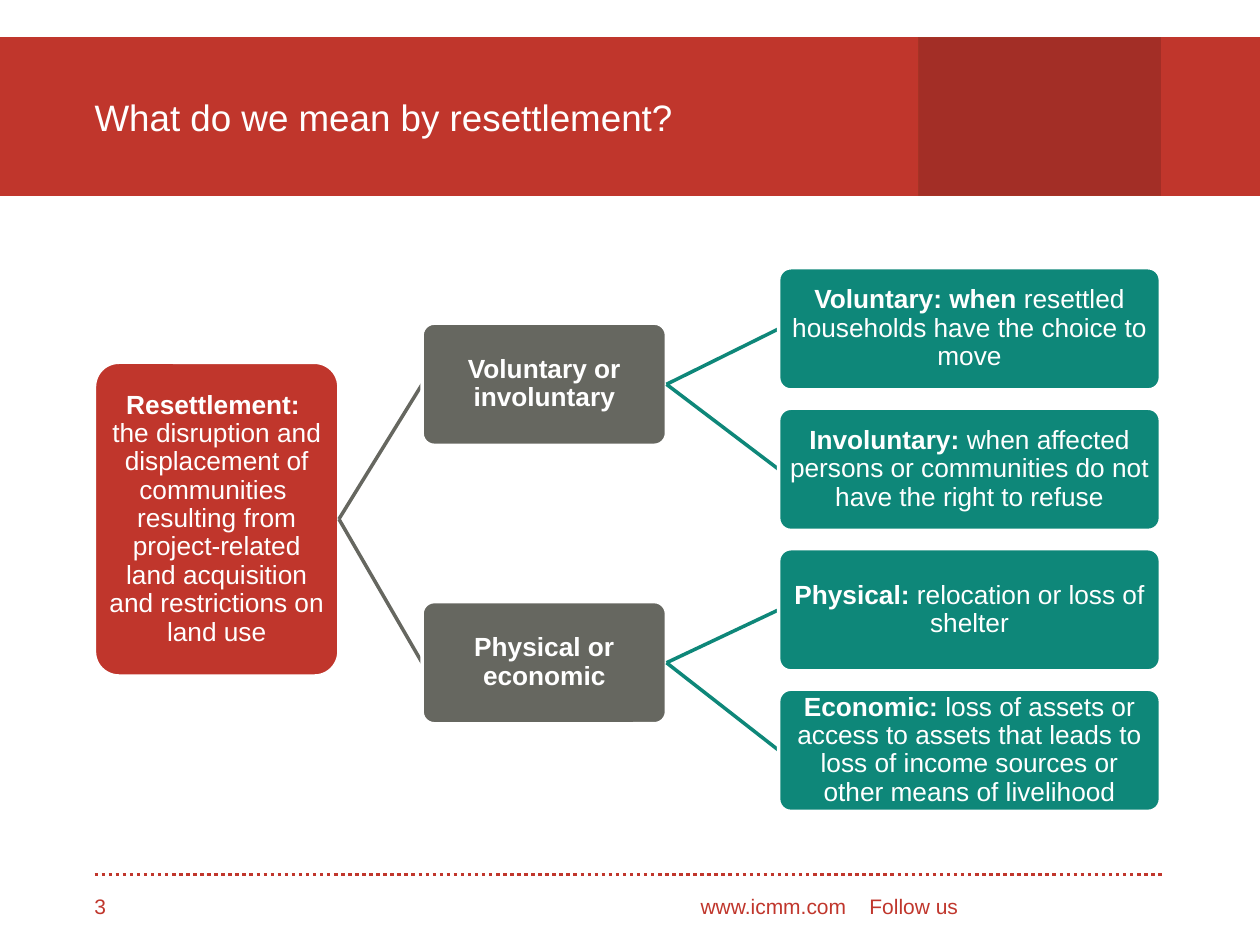
from dataclasses import dataclass

from lxml.etree import SubElement
from pptx import Presentation
from pptx.dml.color import RGBColor
from pptx.enum.dml import MSO_LINE
from pptx.enum.shapes import MSO_CONNECTOR, MSO_SHAPE
from pptx.enum.text import MSO_ANCHOR, PP_ALIGN
from pptx.oxml.ns import qn
from pptx.util import Inches, Pt


@dataclass(frozen=True)
class Theme:
    red: str = "C0362C"
    dark: str = "A32E26"
    edge: str = "A53325"
    grey: str = "666760"
    teal: str = "0E8779"
    white: str = "FFFFFF"
    font: str = "Arial"
    head: float = 21
    body: float = 15
    foot: float = 12


@dataclass(frozen=True)
class Level:
    left: float
    width: float
    height: float
    fill: str
    inset: float


@dataclass(frozen=True)
class Node:
    mid: float  # vertical centre
    bold: str
    plain: str = ""
    kids: tuple = ()


THEME = Theme()
LEFT, RIGHT = 0.75, 9.22  # page margins
TOP, BAND = 0.3, 1.25  # header band
FOOT = 7.09

# One level per column of the tree
LEVELS = (
    Level(LEFT, 1.94, 2.49, THEME.red, 0.06),
    Level(3.35, 1.94, 0.97, THEME.grey, 0.04),
    Level(6.18, 3.03, 0.97, THEME.teal, 0.04),
)
ROWS = [2.61 + 1.115 * row for row in range(4)]

TREE = Node(
    4.12,
    "Resettlement: \n",
    "the disruption and displacement of communities \n"
    "resulting from project-related land acquisition and restrictions on land use",
    (
        Node(3.05, "Voluntary or involuntary", kids=(
            Node(ROWS[0], "Voluntary: when",
                 " resettled households have the choice to move"),
            Node(ROWS[1], "Involuntary: ",
                 "when affected persons or communities do not have the right to refuse"),
        )),
        Node(5.26, "Physical or economic", kids=(
            Node(ROWS[2], "Physical: ", "relocation or loss of shelter"),
            Node(ROWS[3], "Economic: ",
                 "loss of assets or access to assets that leads to "
                 "loss of income sources or other means of livelihood"),
        )),
    ),
)


def paint(shape, fill: str, edge: str, width: float) -> None:
    shape.fill.solid()
    shape.fill.fore_color.rgb = RGBColor.from_string(fill)
    shape.line.color.rgb = RGBColor.from_string(edge)
    shape.line.width = Pt(width)
    shape.shadow.inherit = False


def style(para, size: float, tint: str) -> None:
    para.font.name = THEME.font
    para.font.size = Pt(size)
    para.font.color.rgb = RGBColor.from_string(tint)


def inset(frame, left: float, top: float, right: float, base: float) -> None:
    frame.margin_left, frame.margin_top = Inches(left), Inches(top)
    frame.margin_right, frame.margin_bottom = Inches(right), Inches(base)


def add_text(para, text: str, bold: bool) -> None:
    for row, part in enumerate(text.split("\n")):
        if row:
            para.add_line_break()
        if part:
            run = para.add_run()
            run.text = part
            run.font.bold = bold


def add_line(slide, start: tuple, end: tuple, tint: str):
    ends = [Inches(value) for value in start + end]
    line = slide.shapes.add_connector(MSO_CONNECTOR.STRAIGHT, *ends)
    line.line.color.rgb = RGBColor.from_string(tint)
    line.line.width = Pt(2)
    SubElement(line._element.spPr, qn("a:effectLst"))
    return line


def add_block(slide, left: float, width: float, fill: str, edge: str) -> None:
    block = slide.shapes.add_shape(
        MSO_SHAPE.RECTANGLE, Inches(left), Inches(TOP), Inches(width), Inches(BAND))
    paint(block, fill, edge, 0.75)


def add_note(slide, left: float, width: float, text: str, tab: float = 0) -> None:
    box = slide.shapes.add_textbox(
        Inches(left), Inches(FOOT), Inches(width), Inches(0.3))
    frame = box.text_frame
    frame.word_wrap = True
    inset(frame, 0, 0, 0, 0)
    para = frame.paragraphs[0]
    para.text = text
    if tab:
        tabs = SubElement(para._p.get_or_add_pPr(), qn("a:tabLst"))
        SubElement(tabs, qn("a:tab"), pos=str(Inches(tab)), algn="l")
    style(para, THEME.foot, THEME.red)


def add_node(slide, node: Node, depth: int = 0):
    level = LEVELS[depth]
    box = slide.shapes.add_shape(
        MSO_SHAPE.ROUNDED_RECTANGLE, Inches(level.left),
        Inches(node.mid - level.height / 2), Inches(level.width), Inches(level.height))
    box.adjustments[0] = 0.1
    paint(box, level.fill, THEME.white, 2)
    frame = box.text_frame
    frame.word_wrap = True
    frame.vertical_anchor = MSO_ANCHOR.MIDDLE
    inset(frame, level.inset, level.inset, level.inset, level.inset)
    para = frame.paragraphs[0]
    para.alignment = PP_ALIGN.CENTER
    para.line_spacing = 0.9
    style(para, THEME.body, THEME.white)
    add_text(para, node.bold, True)
    add_text(para, node.plain, False)

    # Each link lies beneath the child it leads to
    for kid in node.kids:
        goal = LEVELS[depth + 1]
        link = add_line(slide, (level.left + level.width, node.mid),
                        (goal.left, kid.mid), goal.fill)
        link.begin_connect(box, 3)
        link.end_connect(add_node(slide, kid, depth + 1), 1)
    return box


def main() -> None:
    deck = Presentation()
    deck.slide_width, deck.slide_height = Inches(10), Inches(7.5)
    slide = deck.slides.add_slide(deck.slide_layouts[5])

    # Header band
    add_block(slide, 7.29, 1.93, THEME.dark, THEME.edge)
    add_block(slide, RIGHT, 10 - RIGHT, THEME.red, THEME.red)
    title = slide.shapes.title
    title.left, title.top = Inches(0), Inches(TOP)
    title.width, title.height = Inches(7.29), Inches(BAND)
    paint(title, THEME.red, THEME.red, 0.75)
    title.text = "What do we mean by resettlement?"
    frame = title.text_frame
    frame.vertical_anchor = MSO_ANCHOR.MIDDLE
    inset(frame, LEFT, 0.05, 0.1, 0.05)
    frame.paragraphs[0].alignment = PP_ALIGN.LEFT
    style(frame.paragraphs[0], THEME.head, THEME.white)

    # Tree
    add_node(slide, TREE)

    # Footer
    rule = add_line(slide, (LEFT, 6.94), (RIGHT, 6.94), THEME.red)
    rule.line.dash_style = MSO_LINE.ROUND_DOT
    add_note(slide, LEFT, 2.33, "3")
    add_note(slide, 5.56, 2.15, "www.icmm.com\tFollow us", tab=1.34)

    deck.save("out.pptx")


if __name__ == "__main__":
    main()
